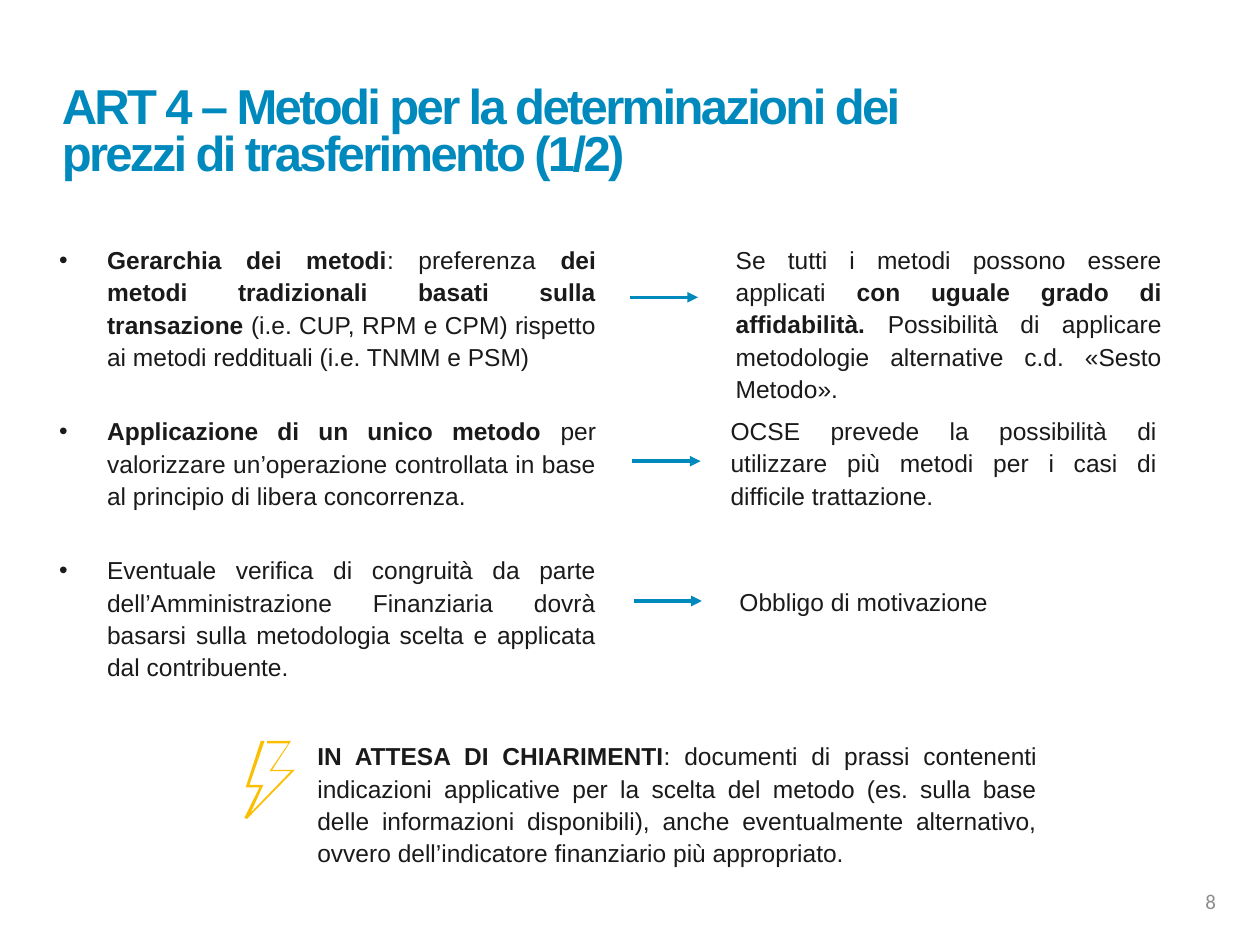
from lxml.etree import SubElement
from pptx import Presentation
from pptx.dml.color import RGBColor
from pptx.enum.shapes import MSO_CONNECTOR
from pptx.enum.text import MSO_ANCHOR, MSO_AUTO_SIZE, PP_ALIGN
from pptx.oxml.ns import qn
from pptx.util import Inches, Pt

COLORS = {"blue": "0089BC", "ink": "1A1A1A", "amber": "FCBE00", "gray": "8D8D8D"}
HANGING = Inches(0.38)

TITLE = "ART 4 – Metodi per la determinazioni dei prezzi di trasferimento (1/2)"
METHODS = [
    [("Gerarchia dei metodi", True), (": preferenza ", False),
     ("dei metodi tradizionali basati sulla transazione ", True),
     ("(i.e. CUP, RPM e CPM) rispetto ai metodi reddituali (i.e. TNMM e PSM)", False)],
    [("Applicazione di un unico metodo ", True),
     ("per valorizzare un’operazione controllata in base al principio di libera "
      "concorrenza.", False)],
    [("Eventuale verifica di congruità da parte dell’Amministrazione Finanziaria dovrà "
      "basarsi sulla metodologia scelta e applicata dal contribuente.", False)],
]
NOTES = [
    ((5.74, 1.87, 3.58, 1.38),
     [("Se tutti i metodi possono essere applicati ", False),
      ("con uguale grado di affidabilità. ", True),
      ("Possibilità di applicare metodologie alternative c.d. «Sesto Metodo».", False)]),
    ((5.7, 3.23, 3.58, 0.86),
     [("OCSE prevede la possibilità di utilizzare più metodi per i casi di difficile "
       "trattazione.", False)]),
    ((5.77, 4.59, 3.58, 0.34), [("Obbligo di motivazione", False)]),
    ((2.42, 5.81, 5.91, 1.12),
     [("IN ATTESA DI CHIARIMENTI", True),
      (": documenti di prassi contenenti indicazioni applicative per la scelta del metodo "
       "(es. sulla base delle informazioni disponibili), anche eventualmente alternativo, "
       "ovvero dell’indicatore finanziario più appropriato.", False)]),
]
ARROW_STARTS = [(5, 2.36), (5.02, 3.66), (5.03, 4.77)]
ARROW_LENGTH = 0.54
BOLT = [
    (2.16, 6.11), (2.34, 6.11), (1.96, 6.5), (1.94, 6.49), (2.06, 6.25), (1.95, 6.25),
    (2.07, 5.88), (2.1, 5.88), (1.98, 6.23), (2.09, 6.23), (1.99, 6.45), (2.31, 6.12),
    (2.14, 6.12), (2.29, 5.9), (2.12, 5.9), (2.12, 5.88), (2.31, 5.88),
]


def rgb(name):
    return RGBColor.from_string(COLORS[name])


def place(shape, box):
    shape.left, shape.top, shape.width, shape.height = map(Inches, box)


def set_font(paragraph, size, color, name="Arial"):
    paragraph.font.size = Pt(size)
    paragraph.font.name = name
    paragraph.font.color.rgb = rgb(color)


def write_passage(paragraph, passage):
    paragraph.alignment = PP_ALIGN.JUSTIFY
    paragraph.line_spacing = 1.1
    paragraph.space_before = Pt(0)
    paragraph.space_after = Pt(6)
    set_font(paragraph, 14, "ink")
    for text, bold in passage:
        run = paragraph.add_run()
        run.text = text
        run.font.bold = bold


def add_bullet(paragraph):
    properties = paragraph._p.get_or_add_pPr()
    properties.set("marL", str(HANGING))
    properties.set("indent", str(-HANGING))
    SubElement(properties, qn("a:buFont")).set("typeface", "Arial")
    SubElement(properties, qn("a:buChar")).set("char", "•")


def fill_title(title):
    place(title, (0.39, 0.55, 7.14, 1.03))
    frame = title.text_frame
    frame.auto_size = MSO_AUTO_SIZE.NONE
    frame.vertical_anchor = MSO_ANCHOR.MIDDLE
    heading = frame.paragraphs[0]
    heading.alignment = PP_ALIGN.LEFT
    heading.line_spacing = 0.8
    set_font(heading, 28, "blue")
    heading.font.bold = True
    run = heading.add_run()
    run.text = TITLE
    run._r.get_or_add_rPr().set("spc", "-150")


def fill_methods(body):
    place(body, (0.37, 1.87, 4.46, 3.6))
    frame = body.text_frame
    frame.auto_size = MSO_AUTO_SIZE.NONE
    for index, passage in enumerate(METHODS):
        paragraph = frame.add_paragraph() if index else frame.paragraphs[0]
        add_bullet(paragraph)
        write_passage(paragraph, passage)
        if index:
            paragraph.space_before = Pt(18)


def add_note(slide, box, passage):
    frame = slide.shapes.add_textbox(*map(Inches, box)).text_frame
    frame.word_wrap = True
    write_passage(frame.paragraphs[0], passage)


def add_arrow(slide, x, y):
    arrow = slide.shapes.add_connector(
        MSO_CONNECTOR.STRAIGHT, Inches(x), Inches(y), Inches(x + ARROW_LENGTH), Inches(y))
    arrow.line.color.rgb = rgb("blue")
    arrow.line.width = Pt(2)
    SubElement(arrow.line._get_or_add_ln(), qn("a:tailEnd")).set("type", "triangle")
    SubElement(arrow._element.spPr, qn("a:effectLst"))


def add_bolt(slide):
    start, *corners = [(Inches(x), Inches(y)) for x, y in BOLT]
    builder = slide.shapes.build_freeform(*start)
    builder.add_line_segments(corners, close=True)
    bolt = builder.convert_to_shape()
    bolt.shadow.inherit = False
    bolt.fill.solid()
    bolt.fill.fore_color.rgb = rgb("amber")
    bolt.line.fill.background()


def add_page_number(slide):
    frame = slide.shapes.add_textbox(*map(Inches, (7.42, 6.95, 2.33, 0.4))).text_frame
    frame.word_wrap = True
    frame.vertical_anchor = MSO_ANCHOR.MIDDLE
    number = frame.paragraphs[0]
    number.text = "8"
    number.alignment = PP_ALIGN.RIGHT
    set_font(number, 12, "gray", "Calibri")


def main():
    deck = Presentation()
    deck.slide_width, deck.slide_height = Inches(10), Inches(7.5)
    slide = deck.slides.add_slide(deck.slide_layouts[1])
    fill_title(slide.shapes.title)
    fill_methods(slide.placeholders[1])
    for box, passage in NOTES:
        add_note(slide, box, passage)
    for x, y in ARROW_STARTS:
        add_arrow(slide, x, y)
    add_bolt(slide)
    add_page_number(slide)
    deck.save("out.pptx")


if __name__ == "__main__":
    main()
